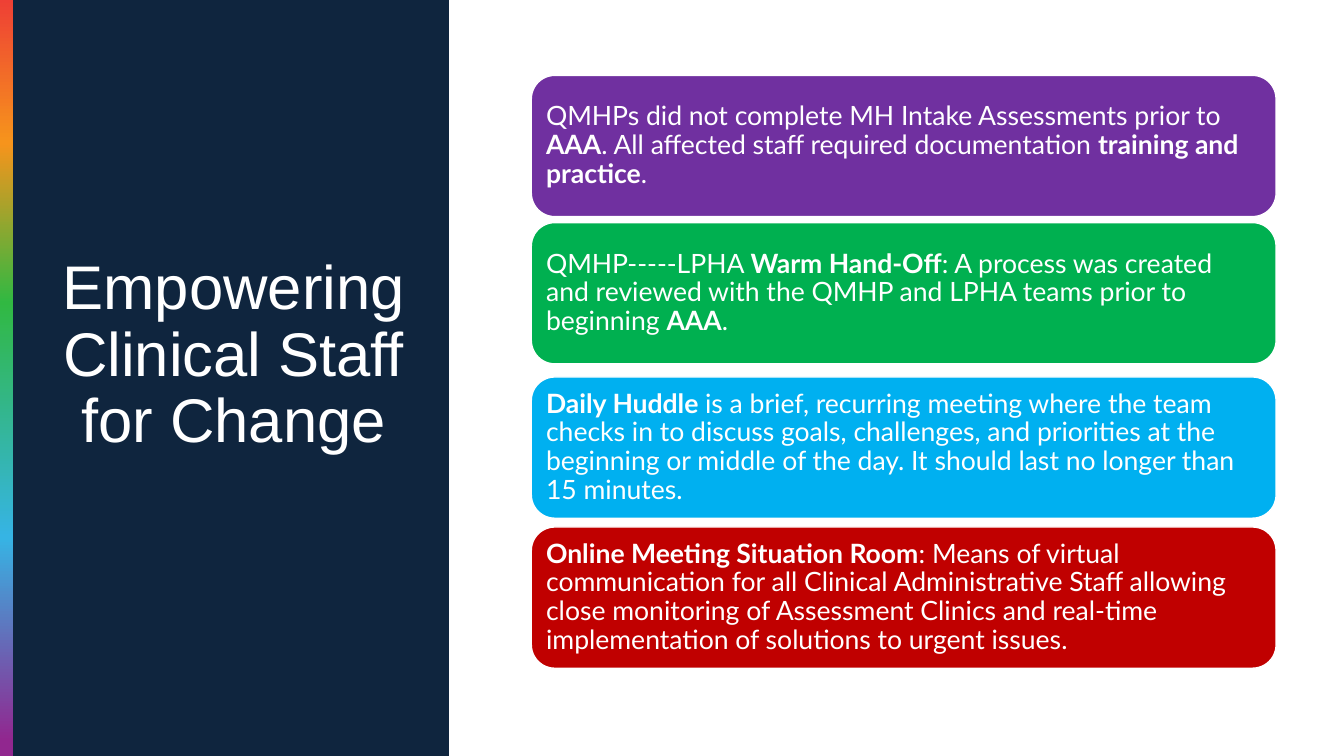
"""Build the slide on empowering clinical staff for change."""
from dataclasses import dataclass

from lxml import etree
from pptx import Presentation
from pptx.dml.color import RGBColor as RGB
from pptx.enum.shapes import MSO_SHAPE as Shape
from pptx.enum.text import MSO_ANCHOR as Anchor, MSO_AUTO_SIZE as AutoSize, PP_ALIGN as Align
from pptx.oxml.ns import qn
from pptx.util import Cm, Pt


@dataclass(frozen=True)
class Theme:
    navy: str = "0F253E"
    white: str = "FFFFFF"
    purple: str = "7030A0"
    green: str = "00B050"
    blue: str = "00B0F0"
    red: str = "C00000"
    rainbow: tuple = ((0, "EE4035"), (19, "F6941C"), (40, "31B842"), (71, "36B4E4"), (98, "91278F"))
    title_font: str = "Arial"
    body_font: str = "Lato"
    title_size: int = 44
    body_size: int = 19


T = Theme()

CARDS = (
    (1.9, T.purple, (
        ("QMHPs did not complete MH Intake Assessments prior to ", False),
        ("AAA", True),
        (". All affected staff required documentation ", False),
        ("training and practice", True),
        (".", False))),
    (5.61, T.green, (
        ("QMHP-----LPHA ", False),
        ("Warm Hand-Off", True),
        (": A process was created and reviewed with the QMHP and LPHA teams "
         "prior to beginning ", False),
        ("AAA", True),
        (".", False))),
    (9.5, T.blue, (
        ("Daily Huddle ", True),
        ("is a brief, recurring meeting where the team checks in to discuss goals, "
         "challenges, and priorities at the beginning or middle of the day. "
         "It should last no longer than 15 minutes.", False))),
    (13.28, T.red, (
        ("Online Meeting Situation Room", True),
        (": Means of virtual communication for all Clinical Administrative Staff allowing "
         "close monitoring of Assessment Clinics and real-time implementation of solutions "
         "to urgent issues.", False))),
)


def add_box(s, kind, left, top, width, height, color):
    """Add a filled shape with a thin white outline."""
    sp = s.shapes.add_shape(kind, Cm(left), Cm(top), Cm(width), Cm(height))
    sp.shadow.inherit = False
    sp.fill.solid()
    sp.fill.fore_color.rgb = RGB.from_string(color)
    sp.line.color.rgb = RGB.from_string(T.white)
    sp.line.width = Pt(1)
    return sp


def add_rainbow_bar(s):
    """Add the vertical gradient strip on the left edge."""
    sp = add_box(s, Shape.RECTANGLE, 0, 0, 0.33, 19.05, T.white)
    sp.line.fill.background()
    sp.fill.gradient()
    sp.fill.gradient_angle = 270
    stops = sp.element.spPr.find(qn("a:gradFill")).find(qn("a:gsLst"))
    for gs in list(stops):
        stops.remove(gs)
    for percent, color in T.rainbow:
        gs = etree.SubElement(stops, qn("a:gs"), pos=str(percent * 1000))
        etree.SubElement(gs, qn("a:srgbClr"), val=color)


def write(tf, runs, font, size, align):
    """Write one white paragraph, run by run, centred vertically."""
    tf.word_wrap = True
    tf.auto_size = AutoSize.NONE
    tf.vertical_anchor = Anchor.MIDDLE
    p = tf.paragraphs[0]
    p.alignment = align
    p.line_spacing = 0.9
    p.space_before = Pt(0)
    for text, bold in runs:
        r = p.add_run()
        r.text = text
        r.font.name = font
        r.font.size = Pt(size)
        r.font.bold = bold
        r.font.color.rgb = RGB.from_string(T.white)


def set_title(s, text):
    """Place and format the title placeholder."""
    sp = s.shapes.title
    sp.left, sp.top, sp.width, sp.height = Cm(0.36), Cm(1.14), Cm(11.07), Cm(15.67)
    write(sp.text_frame, [(text, False)], T.title_font, T.title_size, Align.CENTER)


def add_card(s, top, color, runs):
    """Add a rounded card with its text."""
    sp = add_box(s, Shape.ROUNDED_RECTANGLE, 13.39, top, 18.77, 3.56, color)
    tf = sp.text_frame
    tf.margin_left = tf.margin_right = tf.margin_top = tf.margin_bottom = Cm(0.2)
    write(tf, runs, T.body_font, T.body_size, Align.LEFT)


def main():
    """Build and save the slide."""
    prs = Presentation()
    prs.slide_width, prs.slide_height = Cm(33.87), Cm(19.05)
    s = prs.slides.add_slide(prs.slide_layouts[5])
    s.background.fill.solid()
    s.background.fill.fore_color.rgb = RGB.from_string(T.navy)
    add_box(s, Shape.RECTANGLE, 11.33, 0, 22.54, 19.05, T.white)
    add_rainbow_bar(s)
    set_title(s, "Empowering Clinical Staff for Change")
    for top, color, runs in CARDS:
        add_card(s, top, color, runs)
    prs.save("out.pptx")


if __name__ == "__main__":
    main()
